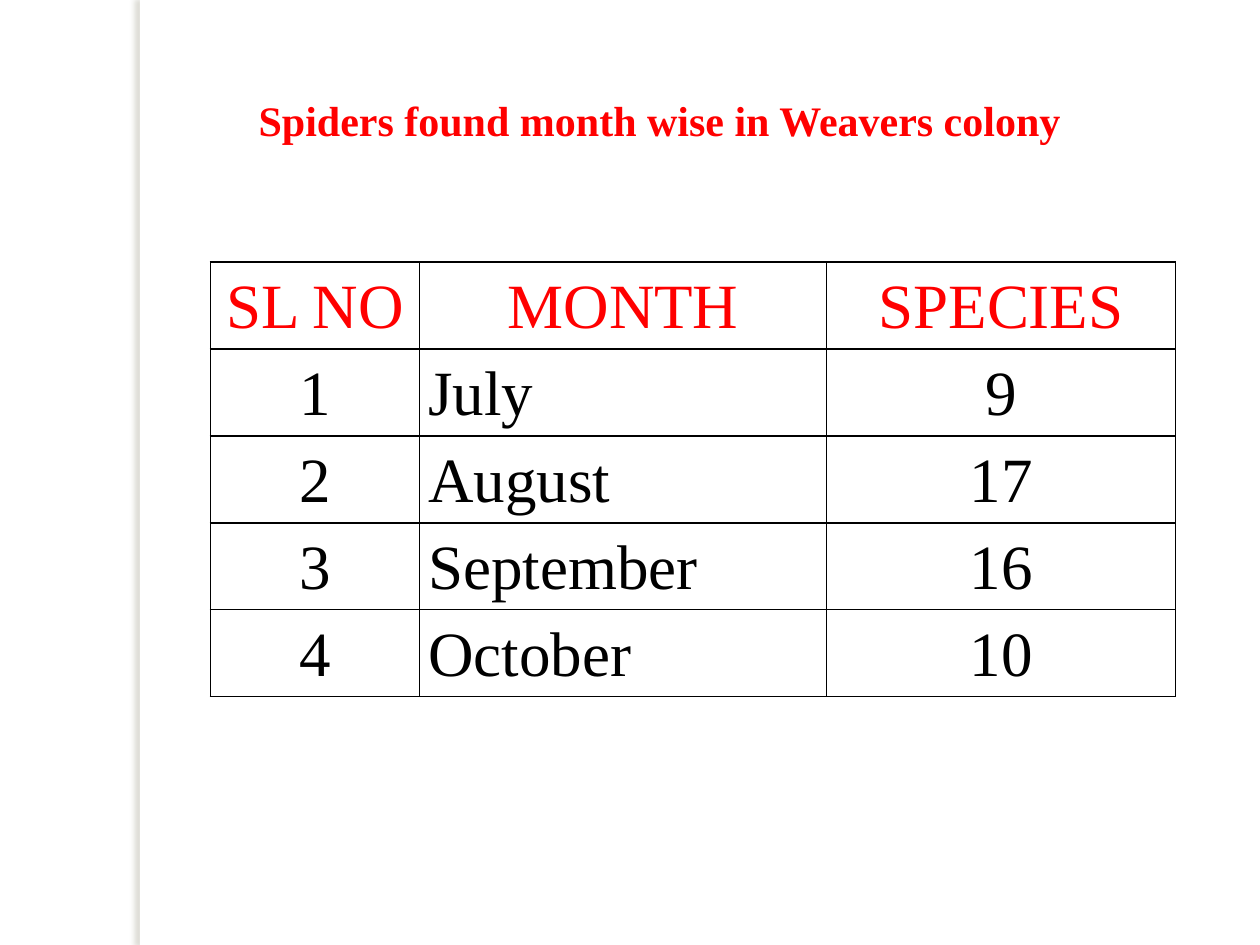
"""Build a slide with a table of spider species found per month."""
from lxml import etree
from pptx import Presentation
from pptx.dml.color import RGBColor
from pptx.enum import shapes, text
from pptx.oxml import ns
from pptx.util import Inches, Pt

RED = RGBColor(0xFF, 0x00, 0x00)
BLACK = RGBColor(0x00, 0x00, 0x00)
WHITE = RGBColor(0xFF, 0xFF, 0xFF)
SHADOW = RGBColor(0x7F, 0x7D, 0x63)
FONT = "Times New Roman"
ROWS = [
    ("SL NO", "MONTH", "SPECIES"),
    ("1", "July", "9"),
    ("2", "August", "17"),
    ("3", "September", "16"),
    ("4", "October", "10"),
]
COL_WIDTHS = (1.66, 3.23, 2.77)
ROW_HEIGHT = 0.69


def add_xml(parent, tag, **attrs):
    el = etree.SubElement(parent, ns.qn(tag))
    for name, value in attrs.items():
        el.set(name, str(value))
    return el


def set_text(p, value, align, **fmt):
    p.alignment = align
    r = p.add_run()
    r.text = value
    r.font.name = FONT
    r.font.color.rgb = fmt.pop("color")
    for name, setting in fmt.items():
        setattr(r.font, name, setting)


prs = Presentation()
prs.slide_width, prs.slide_height = Inches(10), Inches(7.5)
s = prs.slides.add_slide(prs.slide_layouts[5])
s.background.fill.solid()
s.background.fill.fore_color.rgb = WHITE

strip = s.shapes.add_shape(shapes.MSO_SHAPE.RECTANGLE, Inches(1.11), Inches(0), Inches(0.08), Inches(7.5))
strip.fill.solid()
strip.fill.fore_color.rgb = WHITE
strip.line.fill.background()
strip.shadow.inherit = False
effects = strip._element.spPr.find(ns.qn("a:effectLst"))
shadow = add_xml(effects, "a:outerShdw", blurRad=Pt(3), dist=Pt(3), dir=180 * 60000, algn="tl", rotWithShape=0)
add_xml(add_xml(shadow, "a:srgbClr", val=SHADOW), "a:alpha", val=25000)

gf = s.shapes.add_table(len(ROWS), len(COL_WIDTHS), Inches(1.67), Inches(2.08),
                        Inches(sum(COL_WIDTHS)), Inches(ROW_HEIGHT * len(ROWS)))
tbl = gf.table
tbl.first_row = tbl.horz_banding = False
for col, width in zip(tbl.columns, COL_WIDTHS):
    col.width = Inches(width)
for i, values in enumerate(ROWS):
    tbl.rows[i].height = Inches(ROW_HEIGHT)
    for j, value in enumerate(values):
        cell = tbl.cell(i, j)
        cell.margin_left = cell.margin_right = Inches(0.07)
        cell.margin_top = cell.margin_bottom = Inches(0)
        tcPr = cell._tc.get_or_add_tcPr()
        for side in ("a:lnL", "a:lnR", "a:lnT", "a:lnB"):
            ln = add_xml(tcPr, side, w=Pt(1))
            add_xml(add_xml(ln, "a:solidFill"), "a:srgbClr", val=BLACK)
        cell.fill.solid()
        cell.fill.fore_color.rgb = WHITE
        p = cell.text_frame.paragraphs[0]
        p.line_spacing = 1.15
        align = text.PP_ALIGN.LEFT if i and j == 1 else text.PP_ALIGN.CENTER
        set_text(p, value, align, size=Pt(36), color=BLACK if i else RED)

title = s.shapes.title
box = dict(left=1.92, top=0.67, width=6.63, height=1.11)
for name, value in box.items():
    setattr(title, name, Inches(value))
tf = title.text_frame
frame = dict(word_wrap=False, auto_size=text.MSO_AUTO_SIZE.NONE,
             vertical_anchor=text.MSO_ANCHOR.TOP, margin_top=Inches(0.08))
for name, value in frame.items():
    setattr(tf, name, value)
set_text(tf.paragraphs[0], "Spiders found month wise in Weavers colony",
         text.PP_ALIGN.CENTER, size=Pt(24), bold=True, color=RED)

prs.save("out.pptx")
